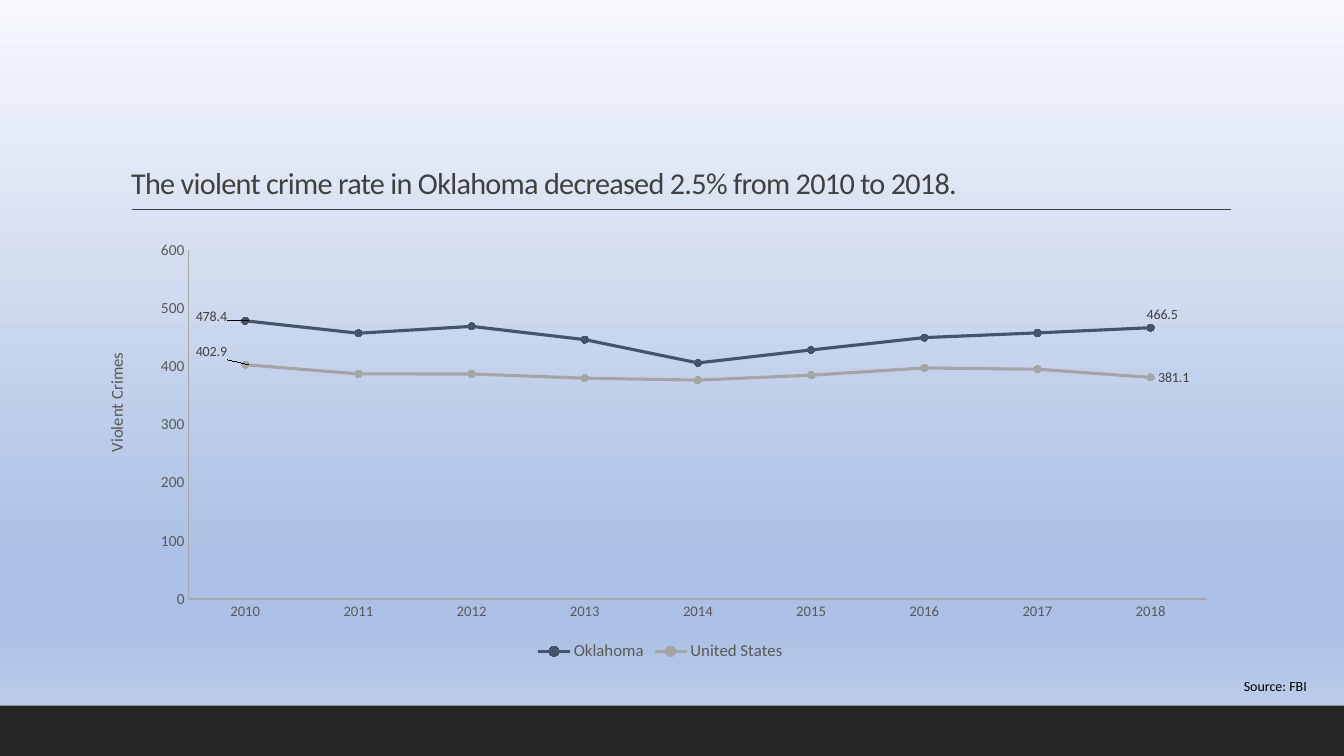
from lxml import etree
from pptx import Presentation
from pptx.chart.data import CategoryChartData
from pptx.dml.color import RGBColor
from pptx.enum.chart import (XL_CHART_TYPE, XL_LABEL_POSITION as LABEL_POS,
                             XL_LEGEND_POSITION as LEGEND_POS, XL_MARKER_STYLE,
                             XL_TICK_MARK)
from pptx.enum.shapes import MSO_CONNECTOR, MSO_SHAPE
from pptx.enum.text import MSO_ANCHOR, MSO_AUTO_SIZE, PP_ALIGN
from pptx.oxml.ns import qn
from pptx.util import Inches, Pt

COLORS = {"dark": "404040", "footer": "262626", "axis_text": "595959",
          "axis_line": "A6A6A6", "black": "000000",
          "oklahoma": "44546A", "us": "A5A5A5"}
SKY = [(0, "F6F8FC"), (74, "ABC0E4"), (83, "ABC0E4"), (100, "C7D5ED")]
YEARS = [str(year) for year in range(2010, 2019)]
# name, colour, values, label offsets by point (fractions of the chart)
SERIES = [
    ("Oklahoma", "oklahoma",
     [478.4, 457, 468.8, 446, 406, 428.3, 449.5, 457.6, 466.5],
     {0: (-0.05, -0.01), 8: (-0.01, -0.03)}),
    ("United States", "us",
     [402.9, 387.1, 387, 379.7, 376.4, 384.9, 397.3, 395.1, 381.1],
     {0: (-0.05, -0.03), 8: None}),
]


def rgb(name):
    return RGBColor.from_string(COLORS[name])


def set_font(font, size, color):
    for key, value in {"name": "Calibri", "size": Pt(size), "bold": False}.items():
        setattr(font, key, value)
    font.color.rgb = rgb(color)


def set_line(line, color, width):
    line.color.rgb = rgb(color)
    line.width = Pt(width)


def manual_layout(**values):
    """Return a c:layout element; keys are child tags of c:manualLayout."""
    layout = etree.Element(qn("c:layout"))
    manual = etree.SubElement(layout, qn("c:manualLayout"))
    for tag, value in values.items():
        etree.SubElement(manual, qn(f"c:{tag}")).set("val", str(value))
    return layout


def replace_layout(parent, after, layout):
    """Put layout in parent, behind the child `after` or first if it is None."""
    for old in parent.findall(qn("c:layout")):
        parent.remove(old)
    parent.insert(0 if after is None else parent.index(after) + 1, layout)


def add_background(s):
    fill = s.background.fill
    fill.gradient()
    fill.gradient_angle = 270
    stops = s.background._cSld.find(".//" + qn("a:gsLst"))
    for old in list(stops):
        stops.remove(old)
    for percent, color in SKY:
        stop = etree.SubElement(stops, qn("a:gs"), pos=str(percent * 1000))
        etree.SubElement(stop, qn("a:srgbClr"), val=color)


def add_footer_band(s):
    sp = s.shapes.add_shape(MSO_SHAPE.RECTANGLE, Inches(0), Inches(7),
                            Inches(13.33), Inches(0.5))
    sp.shadow.inherit = False
    sp.fill.solid()
    sp.fill.fore_color.rgb = rgb("footer")
    sp.line.fill.background()


def add_title_rule(s):
    rule = s.shapes.add_connector(MSO_CONNECTOR.STRAIGHT, Inches(1.31), Inches(2.08),
                                  Inches(12.21), Inches(2.08))
    set_line(rule.line, "dark", 1)
    etree.SubElement(rule._element.spPr, qn("a:effectLst"))


def write_text(sp, text, box, size, color, align, anchor):
    for key, value in zip(("left", "top", "width", "height"), box):
        setattr(sp, key, Inches(value))
    tf = sp.text_frame
    formats = {"word_wrap": True, "auto_size": MSO_AUTO_SIZE.NONE,
               "vertical_anchor": anchor}
    for key, value in formats.items():
        setattr(tf, key, value)
    p = tf.paragraphs[0]
    p.alignment = align
    r = p.add_run()
    r.text = text
    set_font(r.font, size, color)
    return p


def add_title(s, text):
    p = write_text(s.shapes.title, text, (1.2, 1.49, 11, 0.55), 21.6, "dark",
                   PP_ALIGN.LEFT, MSO_ANCHOR.BOTTOM)
    p.line_spacing = 0.9
    p.runs[0].font._element.set("spc", "-50")


def add_source(s, text):
    sp = s.shapes.add_textbox(0, 0, 0, 0)
    write_text(sp, text, (11.69, 6.67, 1.37, 0.27), 10, "black",
               PP_ALIGN.RIGHT, MSO_ANCHOR.TOP)


def format_axis(axis, size):
    axis.major_tick_mark = axis.minor_tick_mark = XL_TICK_MARK.NONE
    axis.has_major_gridlines = False
    set_font(axis.tick_labels.font, size, "axis_text")
    set_line(axis.format.line, "axis_line", 0.75)


def format_series(series, color, offsets):
    series.smooth = False
    set_line(series.format.line, color, 2.25)
    marker = series.marker
    marker.style, marker.size = XL_MARKER_STYLE.CIRCLE, 5
    marker.format.fill.solid()
    marker.format.fill.fore_color.rgb = rgb(color)
    set_line(marker.format.line, color, 0.75)
    series.data_labels.show_value = False
    for index, offset in offsets.items():
        label = series.points[index].data_label
        set_font(label.font, 10, "dark")
        label.position = LABEL_POS.RIGHT
        if offset:
            dlbl = series.data_labels._element.xpath(f'c:dLbl[c:idx/@val="{index}"]')[0]
            replace_layout(dlbl, dlbl.find(qn("c:idx")),
                           manual_layout(x=offset[0], y=offset[1]))


def add_crime_chart(s):
    data = CategoryChartData(number_format="General")
    data.categories = YEARS
    for name, _, values, _ in SERIES:
        data.add_series(name, values)
    chart = s.shapes.add_chart(XL_CHART_TYPE.LINE_MARKERS, Inches(0.9), Inches(2.31),
                               Inches(11.3), Inches(4.29), data).chart
    set_font(chart.font, 10, "black")
    chart.has_title = False
    chart.has_legend = True
    chart.legend.position = LEGEND_POS.BOTTOM
    chart.legend.include_in_layout = False
    set_font(chart.legend.font, 12, "axis_text")

    format_axis(chart.category_axis, 10.5)
    axis = chart.value_axis
    format_axis(axis, 11)
    axis.minimum_scale, axis.maximum_scale, axis.major_unit = 0, 600, 100
    axis.tick_labels.number_format = "0"
    axis.tick_labels.number_format_is_linked = False
    title = axis.axis_title
    p = title.text_frame.paragraphs[0]
    r = p.add_run()
    r.text = "Violent Crimes"
    set_font(r.font, 12, "axis_text")
    title.text_frame._txBody.bodyPr.set("rot", "-5400000")
    replace_layout(title._element, title._element.find(qn("c:tx")),
                   manual_layout(xMode="edge", yMode="edge", x=0.01, y=0.27))

    plot = chart.plots[0]
    plot.vary_by_categories = False
    for series, (_, color, _, offsets) in zip(plot.series, SERIES):
        format_series(series, color, offsets)
    replace_layout(chart._chartSpace.chart.plotArea, None,
                   manual_layout(layoutTarget="inner", xMode="edge", yMode="edge",
                                 x=0.086, y=0.04, w=0.894, h=0.807))


def main():
    prs = Presentation()
    prs.slide_width, prs.slide_height = Inches(13.33), Inches(7.5)
    s = prs.slides.add_slide(prs.slide_layouts[5])
    add_background(s)
    add_footer_band(s)
    add_title_rule(s)
    add_title(s, "The violent crime rate in Oklahoma decreased 2.5% from 2010 to 2018.")
    add_crime_chart(s)
    add_source(s, "Source: FBI")
    prs.save("out.pptx")


if __name__ == "__main__":
    main()
